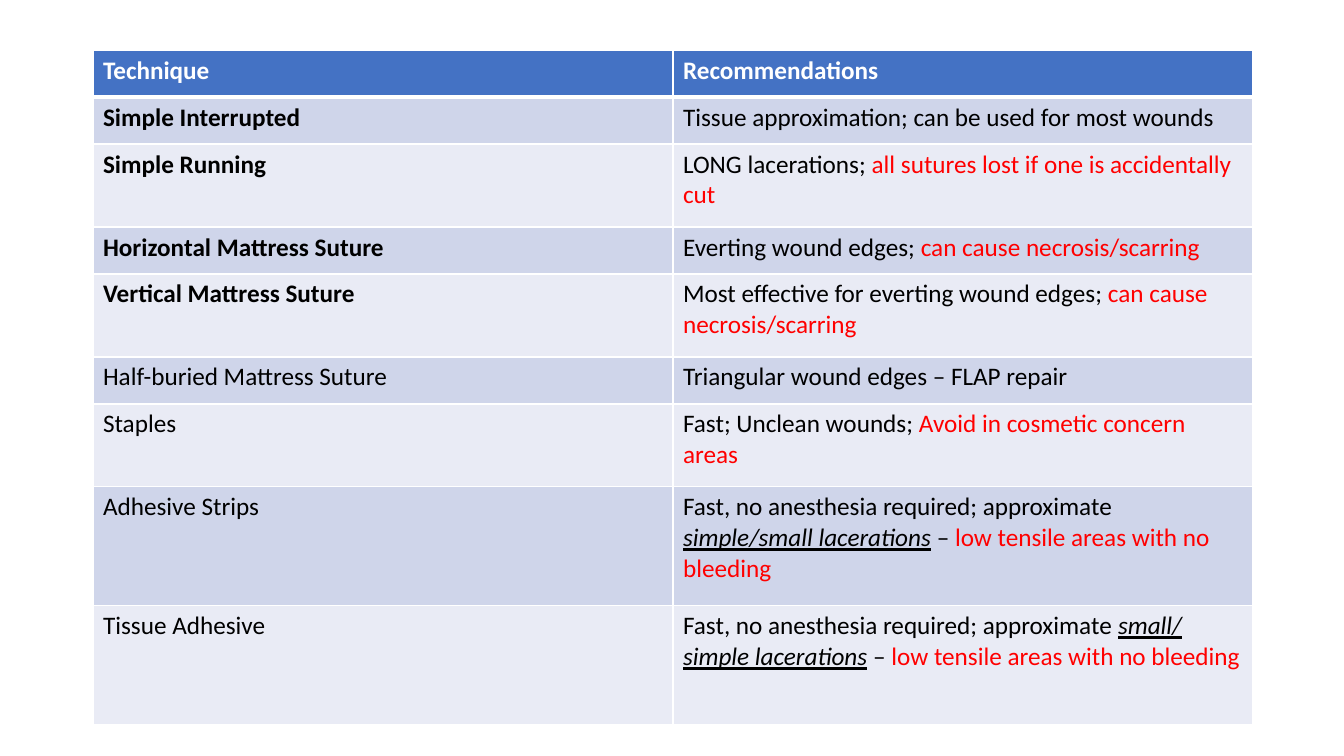
from lxml import etree
from pptx import Presentation
from pptx.dml.color import RGBColor
from pptx.oxml.ns import qn
from pptx.util import Emu, Pt

PX = 914400 / 100.8
BLANK_LAYOUT = 6

WHITE, BLACK, RED = "FFFFFF", "000000", "FF0000"
HEADER_FILL = "4472C4"
BAND_FILLS = ("CFD5EA", "E9EBF5")

LINE_HEIGHT, ROW_PADDING = 36, 11
CAUTION = {"color": RED}
STRESS = {"italic": True, "underline": True}

HEADINGS = ("Technique", "Recommendations")
# technique, bold, lines of text, recommendation runs
TECHNIQUES = [
    ("Simple Interrupted", True, 1,
     [("Tissue approximation; can be used for most wounds", {})]),
    ("Simple Running", True, 2,
     [("LONG lacerations; ", {}),
      ("all sutures lost if one is accidentally cut", CAUTION)]),
    ("Horizontal Mattress Suture", True, 1,
     [("Everting wound edges; ", {}),
      ("can cause necrosis/scarring", CAUTION)]),
    ("Vertical Mattress Suture", True, 2,
     [("Most effective for everting wound edges; ", {}),
      ("can cause necrosis/scarring", CAUTION)]),
    ("Half-buried Mattress Suture", False, 1,
     [("Triangular wound edges – FLAP repair", {})]),
    ("Staples", False, 2,
     [("Fast; Unclean wounds; ", {}),
      ("Avoid in cosmetic concern areas", CAUTION)]),
    ("Adhesive Strips", False, 3,
     [("Fast, no anesthesia required; approximate ", {}),
      ("simple/small lacerations", STRESS),
      (" –", {}),
      (" low tensile areas with no bleeding", CAUTION)]),
    ("Tissue Adhesive", False, 3,
     [("Fast, no anesthesia required; approximate ", {}),
      ("small/ simple lacerations", STRESS),
      (" – ", {}),
      ("low tensile areas with no bleeding", CAUTION)]),
]


def px(n):
    return Emu(round(n * PX))


def rgb(color):
    return RGBColor.from_string(color)


def add_text(p, text, size=18, color=BLACK, bold=False, italic=False,
             underline=False, font="Calibri"):
    r = p.add_run()
    r.text = text
    f = r.font
    f.name, f.size = font, Pt(size)
    f.bold, f.italic, f.underline = bold, italic, underline
    f.color.rgb = rgb(color)


class SlideBuilder:
    """Holds the current slide and its border style."""

    def __init__(self, slide, border=WHITE):
        self.slide = slide
        self.border = border

    def table(self, left, top, widths, heights):
        frame = self.slide.shapes.add_table(
            len(heights), len(widths), px(left), px(top),
            px(sum(widths)), px(sum(heights)))
        table = frame.table
        for column, width in zip(table.columns, widths):
            column.width = px(width)
        for row, height in zip(table.rows, heights):
            row.height = px(height)
        return table

    def cell(self, cell, runs, fill, top=1, bottom=1):
        """Fill a cell with runs; top and bottom are border widths in points."""
        tcPr = cell._tc.get_or_add_tcPr()
        for side, width in zip("LRTB", (1, 1, top, bottom)):
            ln = etree.SubElement(tcPr, qn(f"a:ln{side}"), w=str(Pt(width)))
            solid = etree.SubElement(ln, qn("a:solidFill"))
            etree.SubElement(solid, qn("a:srgbClr"), val=self.border)
        cell.fill.solid()
        cell.fill.fore_color.rgb = rgb(fill)
        p = cell.text_frame.paragraphs[0]
        for text, style in runs:
            add_text(p, text, **style)


def main():
    prs = Presentation()
    prs.slide_width, prs.slide_height = px(1344), px(756)
    s = prs.slides.add_slide(prs.slide_layouts[BLANK_LAYOUT])
    builder = SlideBuilder(s)

    line_counts = [1] + [lines for _, _, lines, _ in TECHNIQUES]
    heights = [LINE_HEIGHT * n + ROW_PADDING for n in line_counts]
    table = builder.table(93, 50, [580, 580], heights)

    for col, heading in enumerate(HEADINGS):
        builder.cell(table.cell(0, col),
                     [(heading, {"color": WHITE, "bold": True})],
                     HEADER_FILL, bottom=3)

    for row, (name, bold, _, advice) in enumerate(TECHNIQUES, start=1):
        fill = BAND_FILLS[(row - 1) % 2]
        top = 3 if row == 1 else 1
        builder.cell(table.cell(row, 0), [(name, {"bold": bold})], fill, top)
        builder.cell(table.cell(row, 1), advice, fill, top)

    prs.save("out.pptx")


if __name__ == "__main__":
    main()
